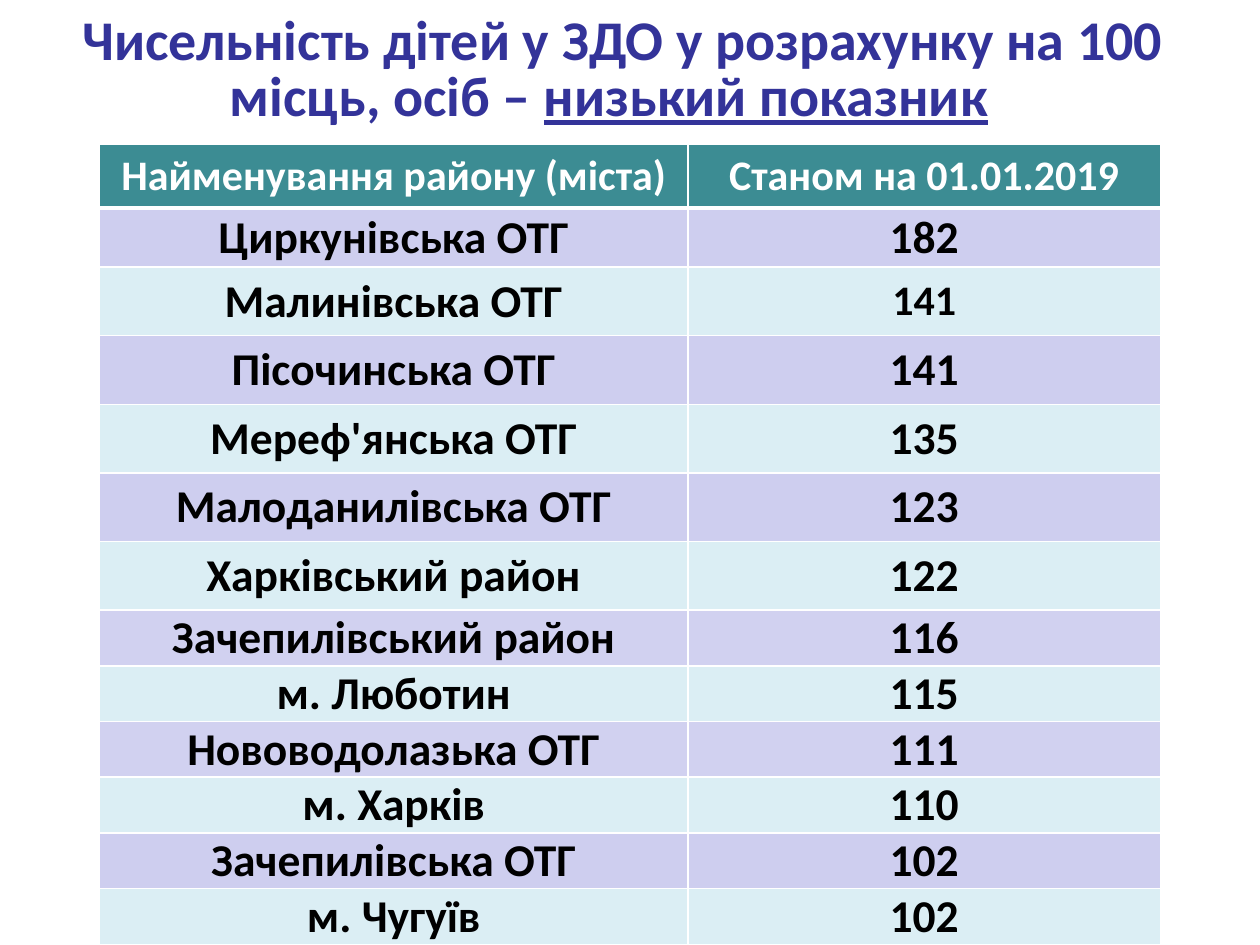
from pptx import Presentation
from pptx.dml.color import RGBColor as RGB
from pptx.enum.text import MSO_ANCHOR as Anchor, PP_ALIGN as Align
from pptx.oxml import parse_xml
from pptx.oxml.ns import nsdecls
from pptx.util import Cm, Pt

COLORS = {
    "title": "333399", "head": "3C8C93", "white": "FFFFFF", "black": "000000",
    "lilac": "CECEEF", "pale": "D1D1F0", "aqua": "DBEEF4",
}
HEADS = ("Найменування району (міста)", "Станом на 01.01.2019")
AREAS = [
    ("Циркунівська ОТГ", 182), ("Малинівська ОТГ", 141),
    ("Пісочинська ОТГ", 141), ("Мереф'янська ОТГ", 135),
    ("Малоданилівська ОТГ", 123), ("Харківський район", 122),
    ("Зачепилівський район", 116), ("м. Люботин", 115),
    ("Нововодолазька ОТГ", 111), ("м. Харків", 110),
    ("Зачепилівська ОТГ", 102), ("м. Чугуїв", 102),
]
HEIGHTS = [1.25, 1.19] + [1.37] * 5 + [1.12] * 6
WIDTHS = [11.86, 9.52]
TALL = range(2, 7)  # rows whose names keep the wide margins
PALE = (7, 9)
SMALL = (2, 1)  # the one value set in the smaller size


def write(para, text, size=26, color="black", line=False):
    run = para.add_run()
    run.text = text
    font = run.font
    font.name, font.size, font.bold = "Calibri", Pt(size), True
    font.color.rgb = RGB.from_string(COLORS[color])
    if line:
        font.underline = True
    para.alignment = Align.CENTER


def edge(cell, **widths):
    """Draw white borders; widths in points, keyed by side L, R, T, B."""
    props = cell._tc.get_or_add_tcPr()
    for side in "LRTB":
        width = Pt(widths.get(side, 1))
        props.append(parse_xml(
            f'<a:ln{side} {nsdecls("a")} w="{width}"><a:solidFill>'
            f'<a:srgbClr val="{COLORS["white"]}"/></a:solidFill></a:ln{side}>'))


def fill_cell(cell, text, fill, wide, borders, **style):
    edge(cell, **borders)
    cell.fill.solid()
    cell.fill.fore_color.rgb = RGB.from_string(COLORS[fill])
    cell.vertical_anchor = Anchor.MIDDLE
    cell.margin_left = cell.margin_right = Cm(0.25 if wide else 0.18)
    cell.margin_top = cell.margin_bottom = Cm(0.13 if wide else 0)
    write(cell.text_frame.paragraphs[0], text, **style)


def add_title(slide):
    title = slide.shapes.title
    title.left, title.top = Cm(0.56), Cm(0.2)
    title.width, title.height = Cm(23.44), Cm(2.51)
    frame = title.text_frame
    frame.word_wrap = True
    frame.vertical_anchor = Anchor.MIDDLE
    para = frame.paragraphs[0]
    para.line_spacing = Pt(32)
    para._p.get_or_add_pPr().set("indent", str(Cm(0.57)))
    write(para, "Чисельність дітей у ЗДО у розрахунку на 100 місць, осіб – ",
          size=32, color="title")
    write(para, "низький показник", size=32, color="title", line=True)


def add_grid(slide):
    table = slide.shapes.add_table(
        len(AREAS) + 1, len(HEADS), Cm(2.01), Cm(2.9),
        Cm(sum(WIDTHS)), Cm(sum(HEIGHTS))).table
    for col, width in zip(table.columns, WIDTHS):
        col.width = Cm(width)
    for row, height in zip(table.rows, HEIGHTS):
        row.height = Cm(height)
    for c, head in enumerate(HEADS):
        fill_cell(table.cell(0, c), head, "head", True, {"B": 3},
                  size=24, color="white")
    for r, area in enumerate(AREAS, 1):
        fill = "pale" if r in PALE else "lilac" if r % 2 else "aqua"
        borders = {"T": 3} if r == 1 else {}
        for c, value in enumerate(area):
            fill_cell(table.cell(r, c), str(value), fill,
                      c == 0 and r in TALL, borders,
                      size=24 if (r, c) == SMALL else 26)


def main():
    deck = Presentation()
    deck.slide_width, deck.slide_height = Cm(25.4), Cm(19.05)
    slide = deck.slides.add_slide(deck.slide_layouts[5])
    add_title(slide)
    add_grid(slide)
    deck.save("out.pptx")


if __name__ == "__main__":
    main()
